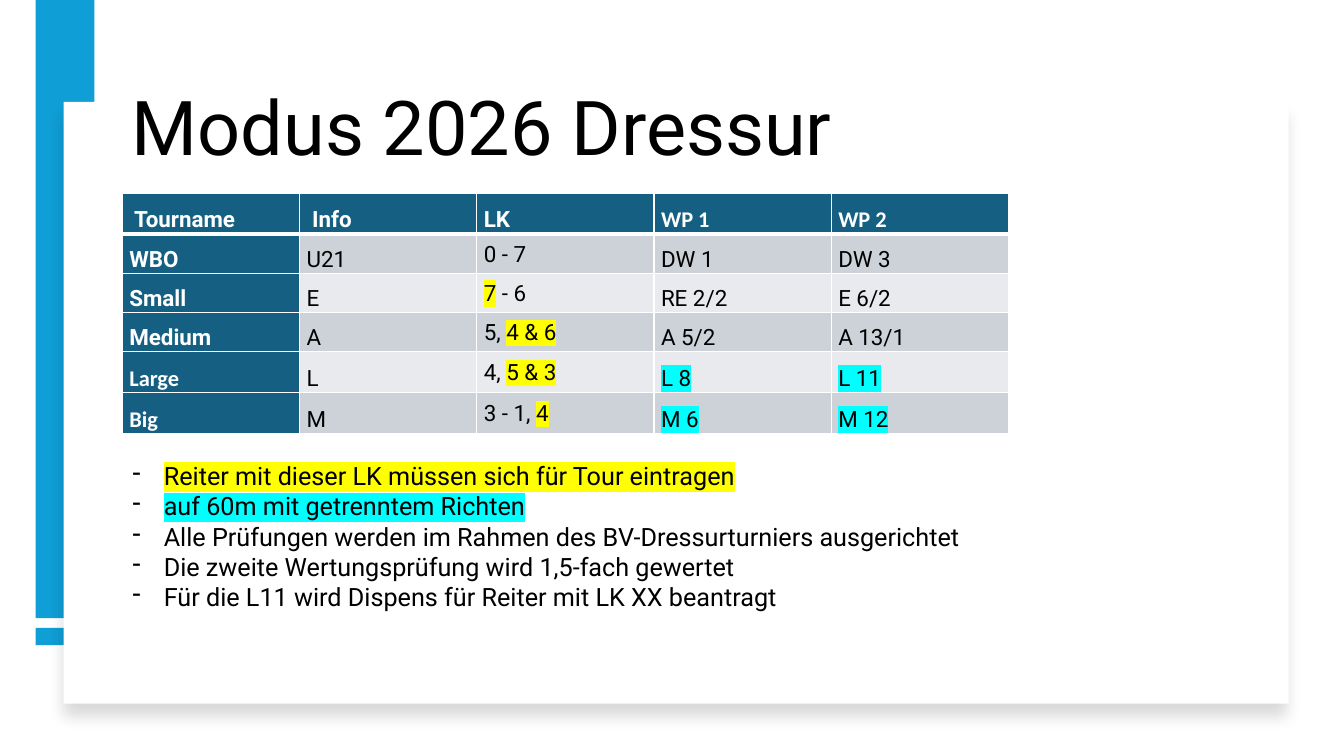
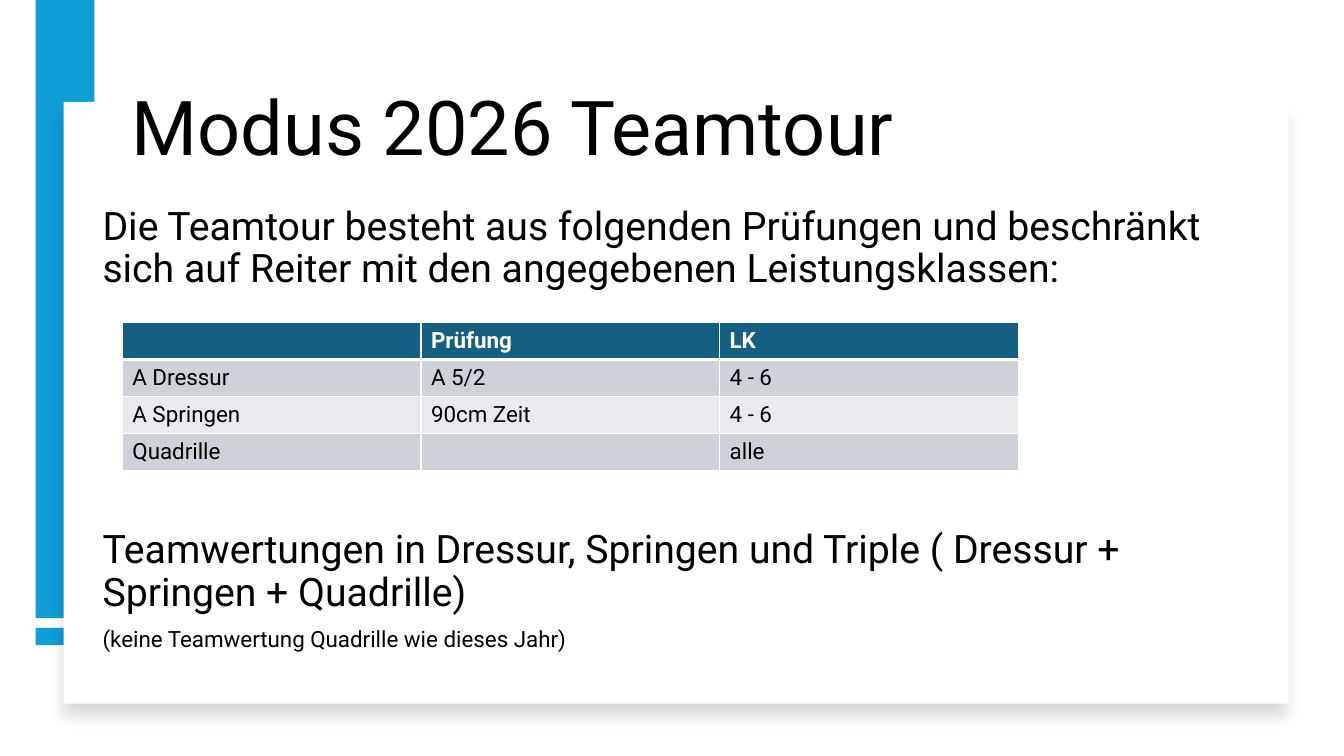
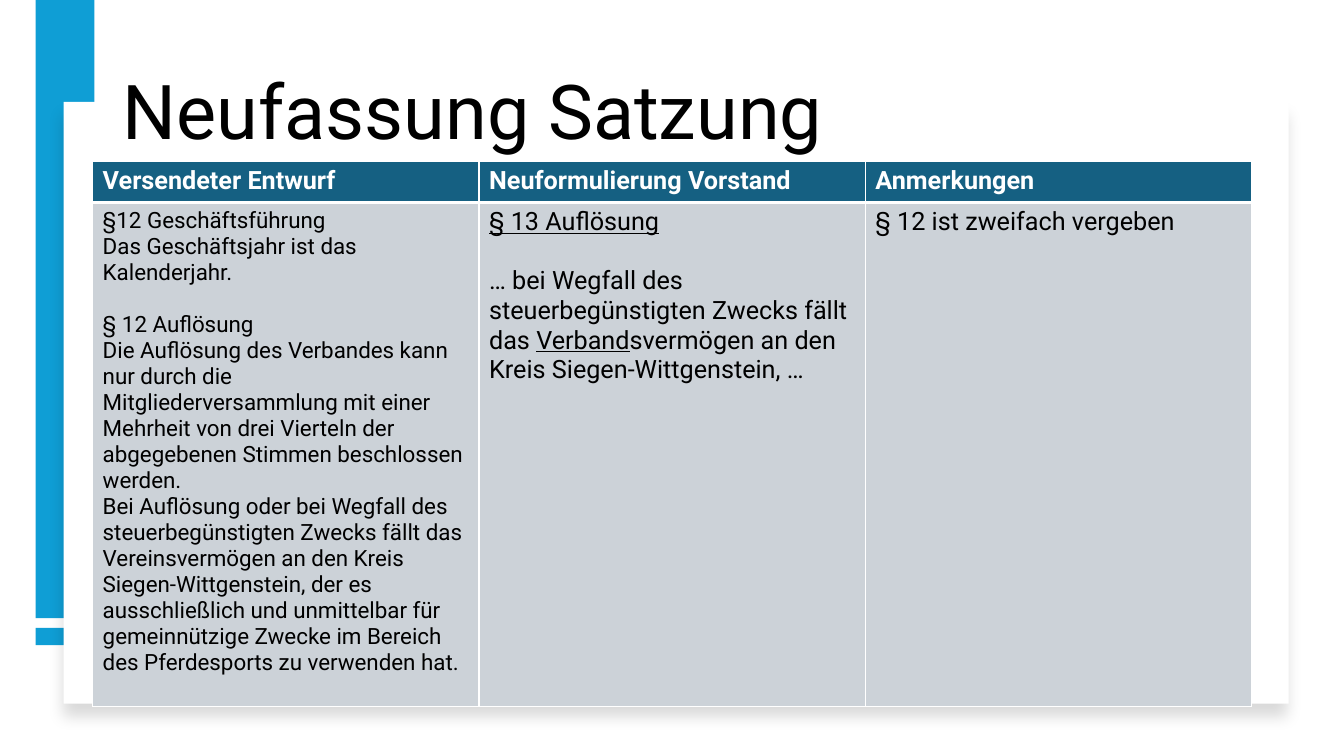
from lxml import etree
from pptx import Presentation
from pptx.dml.color import RGBColor
from pptx.enum import shapes, text
from pptx.oxml import parse_xml
from pptx.oxml.ns import qn
from pptx.util import Pt

HUE = {"blue": "0F9ED5", "head": "156082", "odd": "CCD2D8", "even": "E8EAED",
       "white": "FFFFFF", "black": "000000", "sun": "FFFF00", "sky": "00FFFF"}
FACE = "Roboto"
MAIN = "http://schemas.openxmlformats.org/drawingml/2006/main"
BARS = [(25.5, 0, 42, 441.5), (25.5, 448.5, 42, 12.3)]
CARD = (45.5, 72.8, 875, 429.8)


def rgb(name):
    return RGBColor.from_string(HUE[name])


def place(shape, box):
    shape.left, shape.top, shape.width, shape.height = map(Pt, box)


def style(run, size, hue="black", bold=False, face=FACE, mark=None):
    font = run.font
    font.size, font.bold, font.name = Pt(size), bold, face
    font.color.rgb = rgb(hue)
    if mark == "line":
        font.underline = True
    elif mark:
        fill = run._r.rPr.find(qn("a:solidFill"))
        tint = etree.Element(qn("a:highlight"))
        etree.SubElement(tint, qn("a:srgbClr"), val=HUE[mark])
        fill.addnext(tint)


def write(frame, paras, size, lead=None, after=None, **look):
    for i, parts in enumerate(paras):
        para = frame.add_paragraph() if i else frame.paragraphs[0]
        if lead:
            para.line_spacing = lead
        if after is not None:
            para.space_after = Pt(after)
        for part in [parts] if isinstance(parts, str) else parts:
            words, mark = part if isinstance(part, tuple) else (part, None)
            if words:
                run = para.add_run()
                run.text = words
                style(run, size, mark=mark, **look)
            else:
                etree.SubElement(para._p, qn("a:endParaRPr"), sz=str(size * 100))


def block(slide, fill, box):
    shape = slide.shapes.add_shape(shapes.MSO_SHAPE.RECTANGLE, *map(Pt, box))
    shape.shadow.inherit = False
    shape.fill.solid()
    shape.fill.fore_color.rgb = rgb(fill)
    shape.line.fill.background()
    return shape


def start(deck, title, left=87, top=19.4):
    slide = deck.slides.add_slide(deck.slide_layouts[5])
    for bar in BARS:
        block(slide, "blue", bar)
    card = block(slide, "white", CARD)
    card._element.spPr.find(qn("a:effectLst")).append(parse_xml(
        f'<a:outerShdw xmlns:a="{MAIN}" blurRad="{Pt(11)}" dist="{Pt(10)}" '
        f'dir="5400000" algn="t" rotWithShape="0"><a:srgbClr val="{HUE["black"]}">'
        '<a:alpha val="15000"/></a:srgbClr></a:outerShdw>'))
    head = slide.shapes.title
    slide.shapes._spTree.append(head._element)
    place(head, (left, top, 775.5, 106.6))
    frame = head.text_frame
    frame.text = title
    frame.word_wrap = True
    frame.auto_size = text.MSO_AUTO_SIZE.NONE
    frame.vertical_anchor = text.MSO_ANCHOR.BOTTOM
    para = frame.paragraphs[0]
    para.alignment = text.PP_ALIGN.LEFT
    para.line_spacing = 0.9
    style(para.runs[0], 54)
    return slide


def note(slide, box, paras, size, **look):
    shape = slide.shapes.add_textbox(*map(Pt, box))
    frame = shape.text_frame
    frame.word_wrap = True
    write(frame, paras, size, **look)
    return frame


def edge(cell, row):
    props = cell._tc.get_or_add_tcPr()
    wide = {"lnT": 3 if row == 1 else 1, "lnB": 1 if row else 3}
    for i, side in enumerate(("lnL", "lnR", "lnT", "lnB")):
        props.insert(i, parse_xml(
            f'<a:{side} xmlns:a="{MAIN}" w="{Pt(wide.get(side, 1))}"><a:solidFill>'
            f'<a:srgbClr val="{HUE["white"]}"/></a:solidFill></a:{side}>'))


def grid(slide, box, rows, highs, look, stub=False):
    count = len(rows[0])
    table = slide.shapes.add_table(len(rows), count, *map(Pt, box)).table
    table.horz_banding = False
    for col in table.columns:
        col.width = Pt(box[2] / count)
    for r, (row, high) in enumerate(zip(rows, highs)):
        table.rows[r].height = Pt(high)
        for c, paras in enumerate(row):
            cell = table.cell(r, c)
            head = r == 0 or stub and c == 0
            cell.fill.solid()
            cell.fill.fore_color.rgb = rgb("head" if head else "odd" if r % 2 else "even")
            edge(cell, r)
            write(cell.text_frame, paras, hue="white" if head else "black",
                  bold=head, **look(r, c))
    return table


def ride(deck):
    slide = start(deck, "Modus 2026 Dressur")
    rows = [
        [" Tourname", " Info", "LK", "WP 1", "WP 2"],
        ["WBO", "U21", "0 - 7", "DW 1", "DW 3"],
        ["Small", "E", [("7", "sun"), " - 6"], "RE 2/2", "E 6/2"],
        ["Medium", "A", ["5, ", ("4 & 6", "sun")], "A 5/2", "A 13/1"],
        ["Large", "L", ["4, ", ("5 & 3", "sun")], [("L 8", "sky")], [("L 11", "sky")]],
        ["Big", "M", ["3 - 1, ", ("4", "sun")], [("M 6", "sky")], [("M 12", "sky")]],
    ]

    def look(r, c):
        plain = r == 0 and c > 2 or r > 3 and c == 0
        return {"size": 16, "after": 8, "lead": 1.07 if r and c == 2 else 1.5,
                "face": "Calibri" if plain else FACE}

    table = grid(slide, (87.4, 137.8, 633, 166), [[[cell] for cell in row] for row in rows],
                 [27.6] * len(rows), look, stub=True)
    for cell in table.iter_cells():
        cell.vertical_anchor = text.MSO_ANCHOR.MIDDLE
        cell.margin_left = cell.margin_right = Pt(5)
        cell.margin_top = cell.margin_bottom = 0
    frame = note(slide, (87.4, 325.4, 633, 116.6), [
        [("Reiter mit dieser LK müssen sich für Tour eintragen", "sun")],
        [("auf 60m mit getrenntem Richten", "sky")],
        "Alle Prüfungen werden im Rahmen des BV-Dressurturniers ausgerichtet",
        "Die zweite Wertungsprüfung wird 1,5-fach gewertet",
        "Für die L11 wird Dispens für Reiter mit LK XX beantragt",
    ], 18)
    for para in frame.paragraphs:
        props = para._p.get_or_add_pPr()
        props.set("marL", str(Pt(22.5)))
        props.set("indent", str(Pt(-22.5)))
        etree.SubElement(props, qn("a:buChar"), char="-")


def team(deck):
    slide = start(deck, "Modus 2026 Teamtour")
    note(slide, (66.2, 144, 828, 68), [
        "Die Teamtour besteht aus folgenden Prüfungen und beschränkt sich auf Reiter "
        "mit den angegebenen Leistungsklassen:"], 28, lead=0.9)
    rows = [["", "Prüfung", "LK"], ["A Dressur", "A 5/2", "4 - 6"],
            ["A Springen", "90cm Zeit", "4 - 6"], ["Quadrille", "", "alle"]]
    grid(slide, (87.4, 230.4, 640, 104), [[[cell] for cell in row] for row in rows],
         [26] * len(rows), lambda r, c: {"size": 16})
    frame = note(slide, (66.2, 375, 828, 100), [
        "Teamwertungen in Dressur, Springen und Triple ( Dressur + Springen + Quadrille)",
        "(keine Teamwertung Quadrille wie dieses Jahr)"], 28, lead=0.9)
    last = frame.paragraphs[1]
    last.space_before = Pt(10)
    last.runs[0].font.size = Pt(16)


def law(deck):
    slide = start(deck, "Neufassung Satzung", 80.6, 8.6)
    draft = [
        "§12 Geschäftsführung",
        "Das Geschäftsjahr ist das Kalenderjahr.",
        "§ 12 Auflösung",
        "Die Auflösung des Verbandes kann nur durch die Mitgliederversammlung mit einer "
        "Mehrheit von drei Vierteln der abgegebenen Stimmen beschlossen werden.",
        "Bei Auflösung oder bei Wegfall des steuerbegünstigten Zwecks fällt das "
        "Vereinsvermögen an den Kreis Siegen-Wittgenstein, der es ausschließlich und "
        "unmittelbar für gemeinnützige Zwecke im Bereich des Pferdesports zu verwenden hat.",
    ]
    fresh = [
        [("§ 13 Auflösung", "line")],
        ["… bei Wegfall des steuerbegünstigten Zwecks fällt das ", ("Verband", "line"),
         "svermögen an den Kreis Siegen-Wittgenstein, …"],
    ]
    rows = [[["Versendeter Entwurf"], ["Neuformulierung Vorstand"], ["Anmerkungen"]],
            [draft, fresh, ["§ 12 ist zweifach vergeben"]]]
    table = grid(slide, (66.2, 115.4, 828, 389.2), rows, [29.2, 360],
                 lambda r, c: {"size": 16 if r and c == 0 else 18})
    for col, spot, gap in ((0, 2, 18.8), (1, 1, 21.1)):
        table.cell(1, col).text_frame.paragraphs[spot].space_before = Pt(gap)


def main():
    deck = Presentation()
    deck.slide_width, deck.slide_height = Pt(960), Pt(540)
    for page in (ride, team, law):
        page(deck)
    deck.save("out.pptx")


if __name__ == "__main__":
    main()
